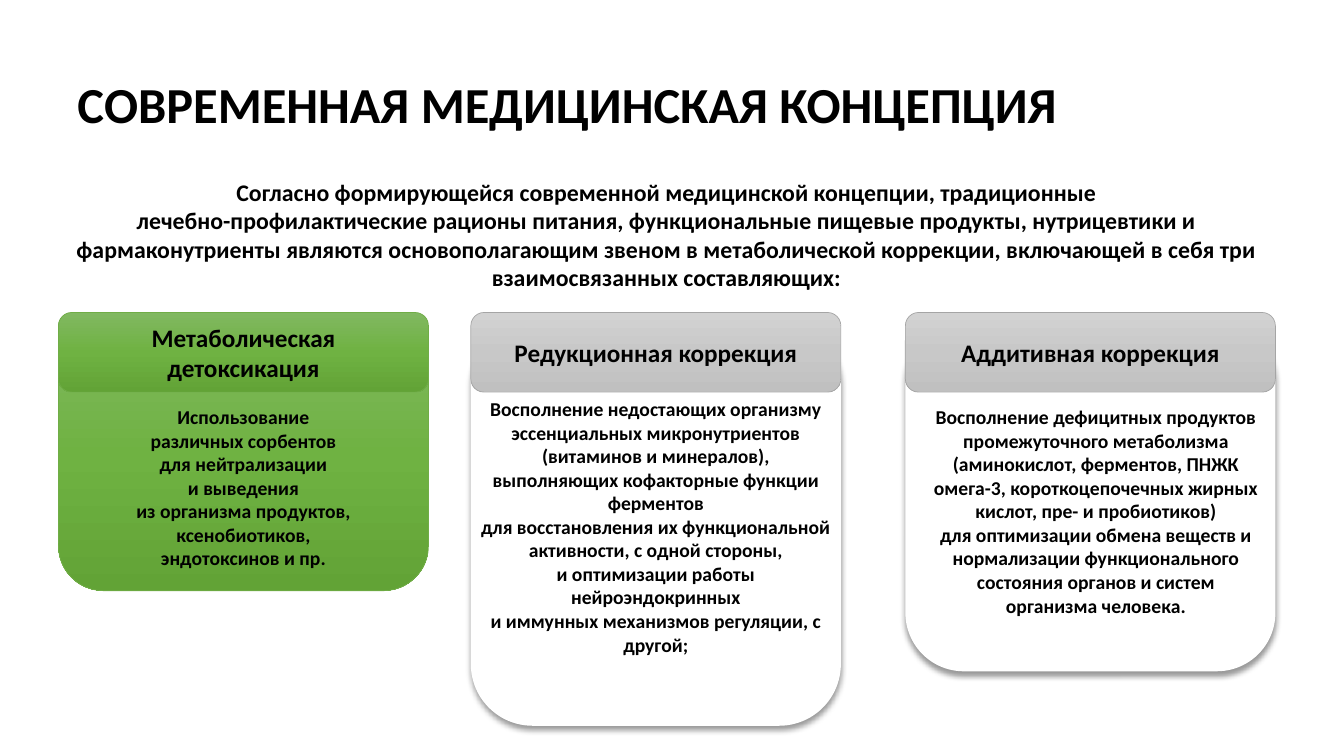
from copy import deepcopy
from dataclasses import dataclass

from lxml.etree import SubElement
from pptx import Presentation
from pptx.dml.color import RGBColor
from pptx.enum.shapes import MSO_SHAPE as Preset
from pptx.enum.text import MSO_ANCHOR as Anchor, PP_ALIGN as Align
from pptx.oxml.ns import qn
from pptx.shapes.autoshape import Shape
from pptx.slide import Slide
from pptx.util import Inches, Pt

BLACK = RGBColor(0x00, 0x00, 0x00)
WHITE = RGBColor(0xFF, 0xFF, 0xFF)
GREEN = RGBColor(0x70, 0xAD, 0x47)
GREEN_STOPS = (RGBColor(0x81, 0xB8, 0x61), RGBColor(0x6F, 0xB2, 0x42), RGBColor(0x62, 0xA3, 0x36))
GRAY = RGBColor(0xA5, 0xA5, 0xA5)
GRAY_STOPS = (RGBColor(0xD2, 0xD2, 0xD2), RGBColor(0xC8, 0xC8, 0xC8), RGBColor(0xC0, 0xC0, 0xC0))

FONT = "Calibri"
CARD_WIDTH = 3.67
HEADER_TOP, HEADER_HEIGHT = 3.1, 0.79
BODY_TOP = 3.18


@dataclass
class Card:
    left: float
    body_height: float
    text_top: float
    text_width: float
    text_height: float
    heading: list[str]
    lines: list[str]
    highlighted: bool = False


TITLE = "СОВРЕМЕННАЯ МЕДИЦИНСКАЯ КОНЦЕПЦИЯ"
INTRO = [
    "Согласно формирующейся современной медицинской концепции, традиционные",
    "лечебно-профилактические рационы питания, функциональные пищевые продукты, "
    "нутрицевтики и фармаконутриенты являются основополагающим звеном в "
    "метаболической коррекции, включающей в себя три взаимосвязанных составляющих:",
]
CARDS = [
    Card(0.58, 2.68, 3.97, 3.67, 1.75, ["Метаболическая", "детоксикация"], [
        "Использование",
        "различных сорбентов",
        "для нейтрализации",
        "и выведения",
        "из организма продуктов, ксенобиотиков,",
        "эндотоксинов и пр.",
    ], highlighted=True),
    Card(4.67, 4.02, 3.89, 3.67, 2.69, ["Редукционная коррекция"], [
        "Восполнение недостающих организму эссенциальных микронутриентов",
        "(витаминов и минералов), выполняющих кофакторные функции ферментов",
        "для восстановления их функциональной активности, с одной стороны,",
        "и оптимизации работы нейроэндокринных",
        "и иммунных механизмов регуляции, с другой;",
    ]),
    Card(8.98, 3.48, 3.97, 3.78, 2.22, ["Аддитивная коррекция"], [
        "Восполнение дефицитных продуктов промежуточного метаболизма "
        "(аминокислот, ферментов, ПНЖК омега-3, короткоцепочечных жирных кислот, "
        "пре- и пробиотиков)",
        "для оптимизации обмена веществ и нормализации функционального "
        "состояния органов и систем",
        "организма человека.",
    ]),
]


def write(shape: Shape, lines: list[str], size: float, align: Align = Align.CENTER,
          anchor: Anchor = Anchor.TOP, spacing: float = 1.0) -> None:
    frame = shape.text_frame
    frame.word_wrap = True
    frame.vertical_anchor = anchor
    frame.text = "\n".join(lines)
    for paragraph in frame.paragraphs:
        paragraph.alignment = align
        paragraph.line_spacing = spacing
        font = paragraph.font
        font.name, font.size, font.bold = FONT, Pt(size), True
        font.color.rgb = BLACK


def add_text(slide: Slide, left: float, top: float, width: float, height: float) -> Shape:
    return slide.shapes.add_textbox(Inches(left), Inches(top), Inches(width), Inches(height))


def add_panel(slide: Slide, left: float, top: float, height: float) -> Shape:
    panel = slide.shapes.add_shape(Preset.ROUNDED_RECTANGLE, Inches(left), Inches(top),
                                   Inches(CARD_WIDTH), Inches(height))
    panel.shadow.inherit = False
    return panel


def paint_gradient(panel: Shape, colors: tuple[RGBColor, ...], outline: RGBColor) -> None:
    fill = panel.fill
    fill.gradient()
    fill.gradient_angle = 270
    # A third stop between the two default ones
    stops = panel._element.spPr.find(qn("a:gradFill")).find(qn("a:gsLst"))
    stops.insert(1, deepcopy(stops[0]))
    for index, (stop, color) in enumerate(zip(fill.gradient_stops, colors)):
        stop.position = index / (len(colors) - 1)
        stop.color.rgb = color
    panel.line.color.rgb = outline
    panel.line.width = Pt(0.5)


def paint_white_with_shadow(panel: Shape) -> None:
    panel.fill.solid()
    panel.fill.fore_color.rgb = WHITE
    panel.line.fill.background()
    effects = panel._element.spPr.find(qn("a:effectLst"))
    shadow = SubElement(effects, qn("a:outerShdw"), blurRad=str(Pt(4)), dist=str(Pt(3)),
                        dir="5400000", algn="ctr", rotWithShape="0")
    color = SubElement(shadow, qn("a:srgbClr"), val=str(BLACK))
    SubElement(color, qn("a:alpha"), val="40000")


def draw_card(slide: Slide, card: Card) -> None:
    # Body
    body = add_panel(slide, card.left, BODY_TOP, card.body_height)
    if card.highlighted:
        paint_gradient(body, GREEN_STOPS, GREEN)
    else:
        paint_white_with_shadow(body)
    description = add_text(slide, card.left, card.text_top, card.text_width, card.text_height)
    write(description, card.lines, 14)

    # Header
    header = add_panel(slide, card.left, HEADER_TOP, HEADER_HEIGHT)
    if card.highlighted:
        paint_gradient(header, GREEN_STOPS, GREEN)
    else:
        paint_gradient(header, GRAY_STOPS, GRAY)
    write(header, card.heading, 18, anchor=Anchor.MIDDLE)


def main() -> None:
    deck = Presentation()
    deck.slide_width, deck.slide_height = Inches(13.33), Inches(7.5)
    slide = deck.slides.add_slide(deck.slide_layouts[6])

    # Title and introduction
    write(add_text(slide, 0.67, 0.44, 12, 1.25), [TITLE], 36, Align.LEFT, Anchor.MIDDLE, 0.9)
    write(add_text(slide, 0.47, 1.71, 12.28, 1.25), INTRO, 17)

    # Three components
    for card in CARDS:
        draw_card(slide, card)

    deck.save("out.pptx")


if __name__ == "__main__":
    main()
